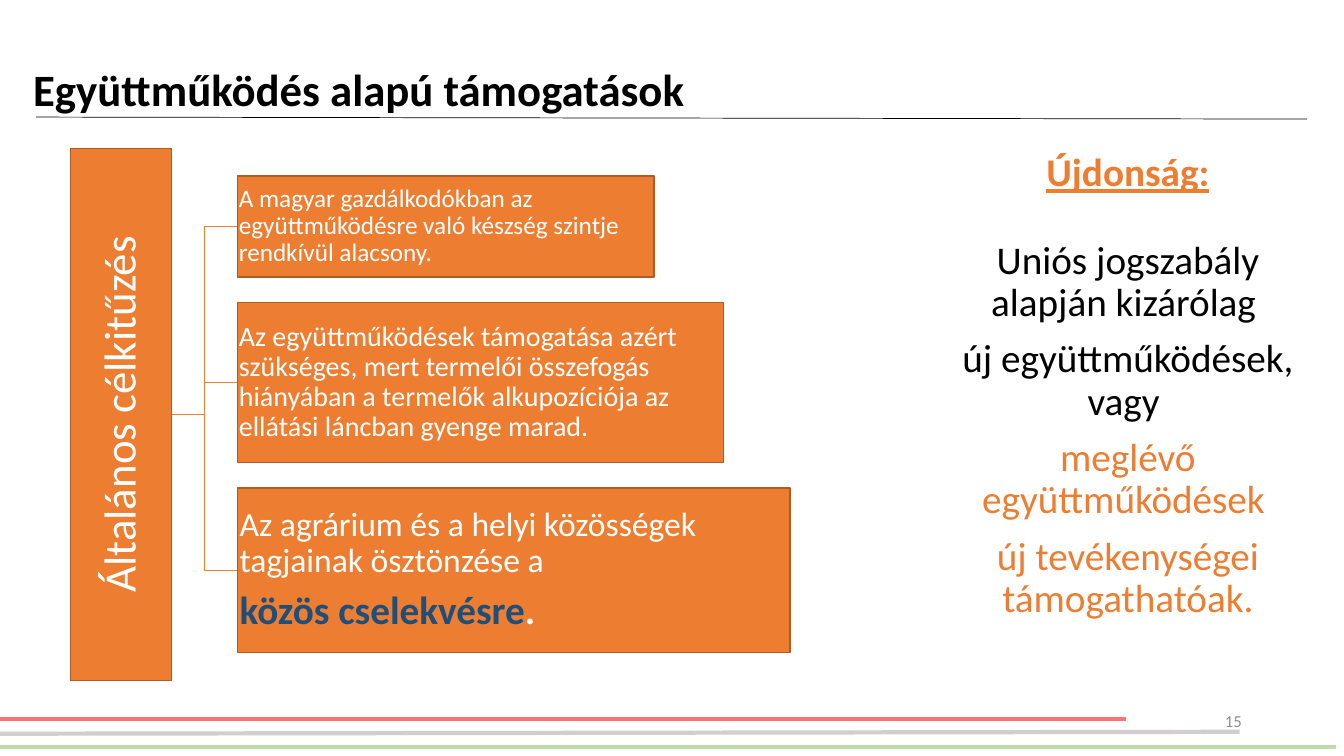
from dataclasses import dataclass

from lxml import etree
from pptx import Presentation
from pptx import util as u
from pptx.dml.color import RGBColor
from pptx.enum import shapes, text
from pptx.oxml.ns import qn

# Content
TITLE = "Együttműködés alapú támogatások"
GOAL = "Általános célkitűzés"
PAGE = "15"

# Each aim: width, height, inset (cm), paragraphs of (text, size, colour, bold) runs
AIMS = [
    (10.49, 2.54, 0.03, [
        [("A magyar gazdálkodókban az együttműködésre való készség szintje "
          "rendkívül alacsony.", 18, "white", False)]]),
    (12.24, 4.04, 0.03, [
        [("Az együttműködések támogatása azért szükséges, mert termelői összefogás "
          "hiányában a termelők alkupozíciója az ellátási láncban gyenge marad.",
          20, "white", False)]]),
    (13.92, 4.14, 0.05, [
        [("Az agrárium és a helyi közösségek tagjainak ösztönzése a", 24, "white", False)],
        [("közös cselekvésre", 28, "navy", True), (".", 28, "white", True)]]),
]

# Each line of the news column: text, colour, heading, space before (pt)
NEWS = [
    ("Újdonság:", "orange", True, 0),
    ("Uniós jogszabály alapján kizárólag ", "black", False, 32),
    ("új együttműködések, vagy ", "black", False, 10),
    ("meglévő együttműködések ", "orange", False, 10),
    ("új tevékenységei támogathatóak.", "orange", False, 10),
]

# Each rule: start, end (cm), colour, weight (pt)
RULES = [
    ((0, 18.11), (28.37, 18.11), "red", 3),
    ((0, 18.82), (33.68, 18.82), "green", 3),
    ((0, 18.49), (31.24, 18.44), "grey", 3),
    ((0.91, 2.95), (32.94, 3.0), "black", 0.5),
]


@dataclass(frozen=True)
class Theme:
    font: str = "Calibri"
    heading: int = 32
    news: int = 28
    page: int = 12
    black: str = "000000"
    white: str = "FFFFFF"
    orange: str = "ED7D31"
    edge: str = "AF5C24"
    navy: str = "1F4E79"
    red: str = "F97376"
    green: str = "BEDCAA"
    grey: str = "D0CECE"
    muted: str = "8C8C8C"

    def rgb(self, name):
        return RGBColor.from_string(getattr(self, name))


THEME = Theme()

# Layout of the tree, in cm
GOAL_CENTRE = (3.05, 10.44)
GOAL_LENGTH, GOAL_DEPTH = 13.41, 2.54
AIM_LEFT, AIM_GAP = 5.99, 0.64


def place(part, left, top, width, height):
    part.left, part.top = u.Cm(left), u.Cm(top)
    part.width, part.height = u.Cm(width), u.Cm(height)


def set_font(font, size, colour, bold=False):
    font.name, font.size, font.bold = THEME.font, u.Pt(size), bold
    font.color.rgb = THEME.rgb(colour)


def add_line(slide, kind, start, end, colour, weight):
    line = slide.shapes.add_connector(kind, *map(u.Cm, (*start, *end)))
    line.line.color.rgb = THEME.rgb(colour)
    line.line.width = u.Pt(weight)
    etree.SubElement(line._element.spPr, qn("a:effectLst"))


def add_box(slide, left, top, width, height, inset, align, paragraphs):
    box = slide.shapes.add_shape(shapes.MSO_SHAPE.RECTANGLE,
                                 *map(u.Cm, (left, top, width, height)))
    box.shadow.inherit = False
    box.fill.solid()
    box.fill.fore_color.rgb = THEME.rgb("orange")
    box.line.color.rgb = THEME.rgb("edge")
    box.line.width = u.Pt(1)
    frame = box.text_frame
    frame.word_wrap = True
    frame.vertical_anchor = text.MSO_ANCHOR.MIDDLE
    frame.margin_left = frame.margin_right = u.Cm(inset)
    frame.margin_top = frame.margin_bottom = u.Cm(inset)
    for i, runs in enumerate(paragraphs):
        paragraph = frame.paragraphs[0] if i == 0 else frame.add_paragraph()
        paragraph.alignment = align
        paragraph.line_spacing = 0.9
        paragraph.space_before = u.Pt(8 if i else 0)
        for words, size, colour, bold in runs:
            run = paragraph.add_run()
            run.text = words
            set_font(run.font, size, colour, bold)
    return box


def add_title(slide):
    title = slide.shapes.title
    place(title, 0.58, 1.4, 29.6, 1.85)
    frame = title.text_frame
    frame.text = TITLE
    frame.auto_size = text.MSO_AUTO_SIZE.NONE
    frame.vertical_anchor = text.MSO_ANCHOR.MIDDLE
    heading = frame.paragraphs[0]
    heading.alignment = text.PP_ALIGN.LEFT
    heading.line_spacing = 0.9
    set_font(heading.font, THEME.heading, "black", True)


def add_news(slide):
    news = slide.placeholders[1]
    place(news, 23.93, 3.73, 8.99, 13.44)
    frame = news.text_frame
    frame.auto_size = text.MSO_AUTO_SIZE.NONE
    for i, (words, colour, is_heading, before) in enumerate(NEWS):
        paragraph = frame.paragraphs[0] if i == 0 else frame.add_paragraph()
        paragraph.text = words
        paragraph.alignment = text.PP_ALIGN.CENTER
        paragraph.line_spacing = 0.9
        paragraph.space_before = u.Pt(before)
        props = paragraph._p.get_or_add_pPr()
        props.set("marL", "0")
        props.set("indent", "0")
        etree.SubElement(props, qn("a:buNone"))
        set_font(paragraph.font, THEME.news, colour, is_heading)
        paragraph.font.underline = is_heading


def add_tree(slide):
    centre_x, centre_y = GOAL_CENTRE
    goal_edge = (centre_x + GOAL_DEPTH / 2, centre_y)
    total = sum(aim[1] for aim in AIMS) + AIM_GAP * (len(AIMS) - 1)
    top = centre_y - total / 2
    for width, height, inset, paragraphs in AIMS:
        add_line(slide, shapes.MSO_CONNECTOR.ELBOW, goal_edge,
                 (AIM_LEFT, top + height / 2), "orange", 1)
        add_box(slide, AIM_LEFT, top, width, height, inset,
                text.PP_ALIGN.LEFT, paragraphs)
        top += height + AIM_GAP
    goal = add_box(slide, centre_x - GOAL_LENGTH / 2, centre_y - GOAL_DEPTH / 2,
                   GOAL_LENGTH, GOAL_DEPTH, 0.05, text.PP_ALIGN.CENTER,
                   [[(GOAL, THEME.heading, "white", False)]])
    goal.rotation = 270


def add_page_number(slide):
    number = slide.shapes.add_textbox(*map(u.Cm, (23.93, 17.65, 7.62, 1.02)))
    frame = number.text_frame
    frame.word_wrap = True
    frame.vertical_anchor = text.MSO_ANCHOR.MIDDLE
    frame.text = PAGE
    frame.paragraphs[0].alignment = text.PP_ALIGN.RIGHT
    set_font(frame.paragraphs[0].font, THEME.page, "muted")


def main():
    deck = Presentation()
    deck.slide_width, deck.slide_height = u.Cm(33.87), u.Cm(19.05)
    slide = deck.slides.add_slide(deck.slide_layouts[1])
    for start, end, colour, weight in RULES:
        add_line(slide, shapes.MSO_CONNECTOR.STRAIGHT, start, end, colour, weight)
    add_title(slide)
    add_news(slide)
    add_page_number(slide)
    add_tree(slide)
    deck.save("out.pptx")


if __name__ == "__main__":
    main()
